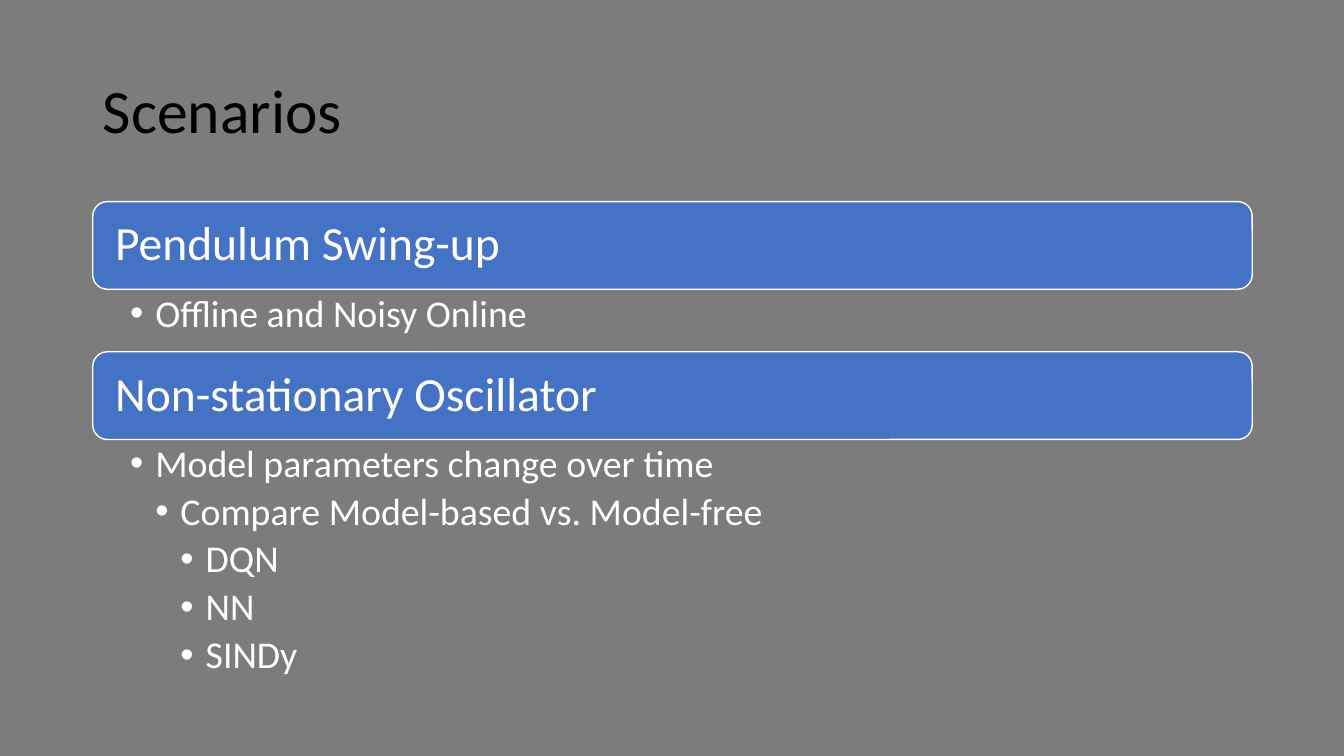
from pptx import Presentation
from pptx.dml.color import RGBColor
from pptx.enum.shapes import MSO_SHAPE
from pptx.enum.text import MSO_ANCHOR, MSO_AUTO_SIZE, PP_ALIGN
from pptx.oxml.ns import qn
from pptx.util import Inches, Pt
from lxml import etree

# Content: heading, then (level, text) bullets
TITLE = "Scenarios"
TOPICS = [
    ("Pendulum Swing-up", [(1, "Offline and Noisy Online")]),
    ("Non-stationary Oscillator", [
        (1, "Model parameters change over time"),
        (2, "Compare Model-based vs. Model-free"),
        (3, "DQN"),
        (3, "NN"),
        (3, "SINDy"),
    ]),
]

# Style
GREY = RGBColor(0x7C, 0x7C, 0x7C)
BLUE = RGBColor(0x44, 0x72, 0xC4)
WHITE = RGBColor(0xFF, 0xFF, 0xFF)
BLACK = RGBColor(0, 0, 0)
FONT = "Calibri"
ROUND = MSO_SHAPE.ROUNDED_RECTANGLE
LEFT = PP_ALIGN.LEFT
MIDDLE, TOP = MSO_ANCHOR.MIDDLE, MSO_ANCHOR.TOP
NO_FIT = MSO_AUTO_SIZE.NONE

# Layout in inches
EDGE, WIDTH = 0.92, 11.5
START, BAR = 2.0, 0.87
LISTS = [0.62, 2.39]
STEP = 0.25


def place(shape, top, height):
    shape.left, shape.top = Inches(EDGE), Inches(top)
    shape.width, shape.height = Inches(WIDTH), Inches(height)


def set_frame(frame, anchor, left, side, right):
    frame.word_wrap = True
    frame.auto_size = NO_FIT
    frame.vertical_anchor = anchor
    frame.margin_left, frame.margin_right = Inches(left), Inches(right)
    frame.margin_top = frame.margin_bottom = Inches(side)


def style(para, size, color):
    para.alignment = LEFT
    para.line_spacing = 0.9
    para.space_before = Pt(0)
    para.font.name, para.font.size = FONT, Pt(size)
    para.font.color.rgb = color


def add_bar(slide, text, top):
    bar = slide.shapes.add_shape(ROUND, 0, 0, 0, 0)
    place(bar, top, BAR)
    bar.shadow.inherit = False
    bar.fill.solid()
    bar.fill.fore_color.rgb = BLUE
    bar.line.color.rgb = WHITE
    bar.line.width = Pt(1)
    set_frame(bar.text_frame, MIDDLE, 0.18, 0.14, 0.18)
    bar.text_frame.text = text
    style(bar.text_frame.paragraphs[0], 34, WHITE)


def fill_list(body, items, top, height):
    place(body, top, height)
    frame = body.text_frame
    set_frame(frame, TOP, 0.37, 0.05, 0.26)
    frame.text = "\n".join(text for _, text in items)
    for para, (level, _) in zip(frame.paragraphs, items):
        para.level = level
        style(para, 27, WHITE)
        para.space_after = Pt(5)
        props = para._p.get_or_add_pPr()
        props.set("marL", str(Inches(STEP * level)))
        props.set("indent", str(-Inches(STEP)))
        etree.SubElement(props, qn("a:buFont")).set("typeface", "Arial")
        etree.SubElement(props, qn("a:buChar")).set("char", "•")


def main():
    deck = Presentation()
    deck.slide_width, deck.slide_height = Inches(13.33), Inches(7.5)
    # Layout with a title and two content placeholders
    slide = deck.slides.add_slide(deck.slide_layouts[3])
    slide.background.fill.solid()
    slide.background.fill.fore_color.rgb = GREY

    # Title
    title = slide.shapes.title
    place(title, 0.4, 1.45)
    set_frame(title.text_frame, MIDDLE, 0.1, 0.05, 0.1)
    title.text_frame.text = TITLE
    style(title.text_frame.paragraphs[0], 44, BLACK)

    # Bars with their lists, stacked downwards
    top = START
    for i, (head, items) in enumerate(TOPICS):
        add_bar(slide, head, top)
        fill_list(slide.placeholders[i + 1], items, top + BAR, LISTS[i])
        top += BAR + LISTS[i]

    deck.save("out.pptx")


if __name__ == "__main__":
    main()
